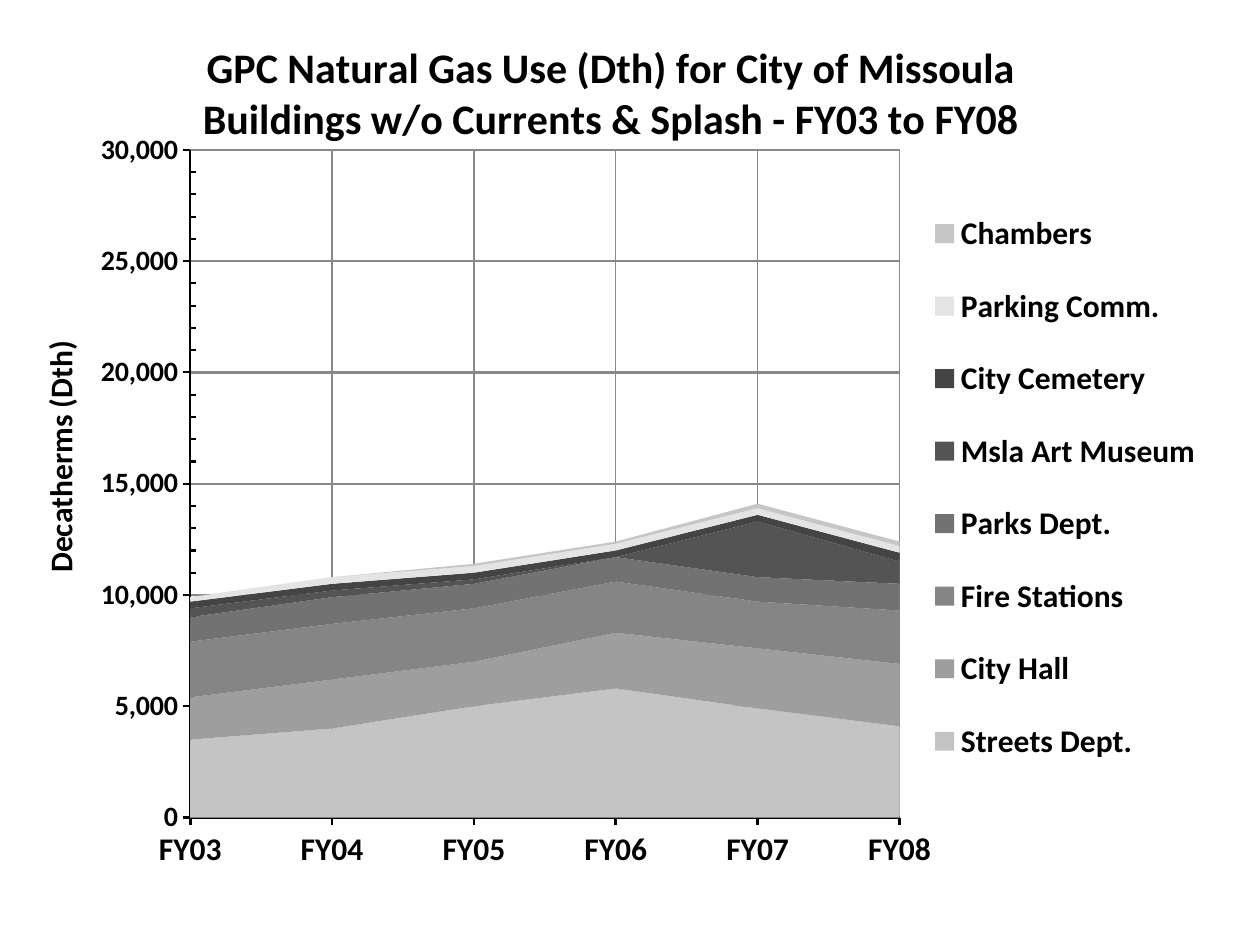
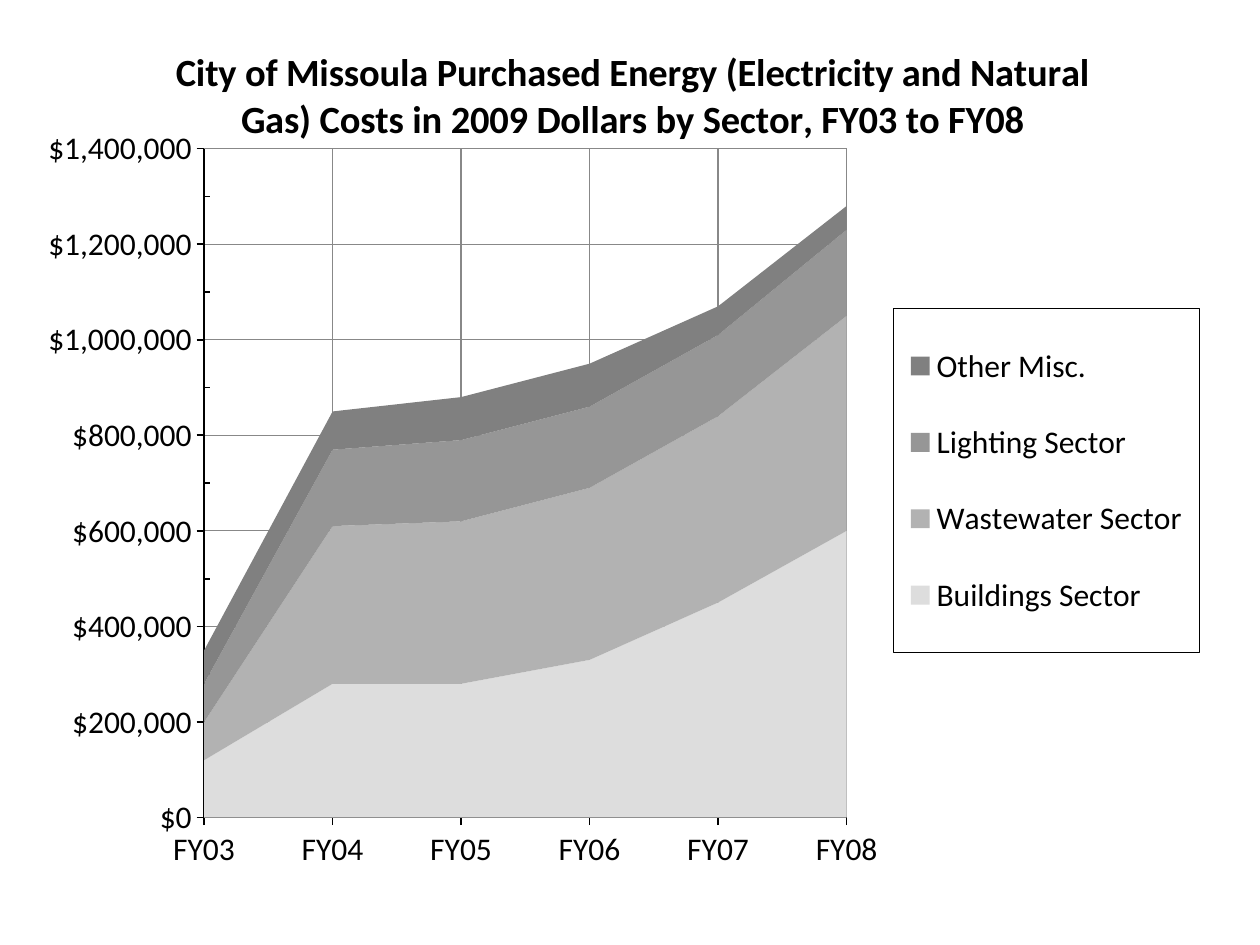
from itertools import cycle
from lxml import etree
from pptx import Presentation
from pptx.chart.data import CategoryChartData
from pptx.dml.color import RGBColor
from pptx.enum.chart import XL_CHART_TYPE, XL_LEGEND_POSITION, XL_TICK_MARK
from pptx.oxml import parse_xml
from pptx.oxml.ns import nsdecls, qn
from pptx.util import Inches, Pt

BLACK = RGBColor(0x00, 0x00, 0x00)
GRID = RGBColor(0x88, 0x88, 0x88)
WIDE, HIGH = Inches(9.46), Inches(6.87)

# Content: series run from the bottom band to the top;
# spots, plots and legends are in inches from the chart's corner
YEARS = ["FY03", "FY04", "FY05", "FY06", "FY07", "FY08"]

GAS = {
    "title": "GPC Natural Gas Use (Dth) for City of Missoula "
             "Buildings w/o Currents & Splash - FY03 to FY08",
    "size": 24, "bold": True, "alpha": 61,
    "spot": (1.3, 0),
    "plot": (1.26, 0.94, 5.63, 5.3),
    "legend": (7.03, 1.18, 2.35, 4.88), "frame": False,
    "axis": "Decatherms (Dth)", "format": "#,##0",
    "max": 30000, "major": 5000, "minor": 1000,
    "label": 16, "line": (1.5, 1.25), "grid": 1.25,
    "series": [
        ("Streets Dept.", "C4C4C4", (3500, 4000, 5000, 5800, 4900, 4100)),
        ("City Hall", "9E9E9E", (1900, 2200, 2000, 2500, 2700, 2800)),
        ("Fire Stations", "858585", (2500, 2500, 2400, 2300, 2100, 2400)),
        ("Parks Dept.", "727272", (1100, 1200, 1100, 1100, 1100, 1200)),
        ("Msla Art Museum", "545454", (400, 300, 200, None, 2500, 1000)),
        ("City Cemetery", "444444", (300, 300, 300, 300, 300, 400)),
        ("Parking Comm.", "E4E4E4", (200, 300, 300, 300, 300, 300)),
        ("Chambers", "C6C6C6", (None, None, 100, 100, 200, 200)),
    ],
}

COSTS = {
    "title": "City of Missoula Purchased Energy (Electricity and Natural Gas) "
             "Costs in 2009 Dollars by Sector, FY03 to FY08",
    "size": 22, "bold": False, "alpha": 56,
    "spot": (1.09, 0.05),
    "plot": (1.37, 0.93, 5.1, 5.31),
    "legend": (6.84, 2.2, 2.43, 2.73), "frame": True,
    "axis": None, "format": '"$"#,##0',
    "max": 1400000, "major": 200000, "minor": 100000,
    "label": 18, "line": (1, 1), "grid": 0.75,
    "series": [
        ("Buildings Sector", "DDDDDD",
         (120000, 280000, 280000, 330000, 450000, 600000)),
        ("Wastewater Sector", "B2B2B2",
         (80000, 330000, 340000, 360000, 390000, 450000)),
        ("Lighting Sector", "969696",
         (80000, 160000, 170000, 170000, 170000, 180000)),
        ("Other Misc.", "808080",
         (70000, 80000, 90000, 90000, 60000, 50000)),
    ],
}


def set_font(font, size, bold):
    font.name = "Calibri"
    font.size = Pt(size)
    font.bold = bold
    font.color.rgb = BLACK


def set_line(line, color, width):
    line.color.rgb = color
    line.width = Pt(width)


def place(node, spot, after=None, inner=False):
    """Give a chart part a manual layout, after the named child or first."""
    for old in node.findall(qn("c:layout")):
        node.remove(old)
    layout = parse_xml(f"<c:layout {nsdecls('c')}><c:manualLayout/></c:layout>")
    parts = [("layoutTarget", "inner")] if inner else []
    parts += [("xMode", "edge"), ("yMode", "edge")]
    parts += [(tag, Inches(length) / full)
              for tag, length, full in zip("xywh", spot, cycle((WIDE, HIGH)))]
    for tag, value in parts:
        etree.SubElement(layout[0], qn(f"c:{tag}")).set("val", str(value))
    if after:
        node.find(qn(after)).addnext(layout)
    else:
        node.insert(0, layout)


def add_title(title, text, size, spot):
    frame = title.text_frame
    frame.text = text
    set_font(frame.paragraphs[0].runs[0].font, size, True)
    place(title._element, spot, "c:tx")
    return frame


def style_axes(chart, info):
    years, amount = chart.category_axis, chart.value_axis
    sizes = (18, info["label"])
    for axis, size, width in zip((years, amount), sizes, info["line"]):
        axis.has_major_gridlines = True
        set_line(axis.format.line, BLACK, width)
        axis.major_tick_mark = XL_TICK_MARK.OUTSIDE
        set_font(axis.tick_labels.font, size, info["bold"])
    set_line(years.major_gridlines.format.line, GRID, 0.75)
    set_line(amount.major_gridlines.format.line, GRID, info["grid"])
    amount.minor_tick_mark = XL_TICK_MARK.INSIDE
    amount.minimum_scale, amount.maximum_scale = 0, info["max"]
    amount.major_unit, amount.minor_unit = info["major"], info["minor"]
    amount.tick_labels.number_format = info["format"]
    amount.tick_labels.number_format_is_linked = False
    amount._element.find(qn("c:crossBetween")).set("val", "midCat")
    if info["axis"]:
        frame = add_title(amount.axis_title, info["axis"], 18, (0.01, 2.41))
        body = frame._txBody.find(qn("a:bodyPr"))
        body.set("rot", "-5400000")
        body.set("vert", "horz")


def style_legend(chart, info):
    chart.has_legend = True
    legend = chart.legend
    legend.position = XL_LEGEND_POSITION.RIGHT
    legend.include_in_layout = False
    set_font(legend.font, 18, info["bold"])
    place(legend._element, info["legend"], "c:legendPos")
    if info["frame"]:
        legend._element.find(qn("c:overlay")).addnext(parse_xml(
            f'<c:spPr {nsdecls("c", "a")}><a:ln w="9525"><a:solidFill>'
            f'<a:srgbClr val="{BLACK}"/></a:solidFill></a:ln></c:spPr>'))


def add_area(slide, info):
    data = CategoryChartData(number_format=info["format"])
    data.categories = YEARS
    for name, _, values in info["series"]:
        data.add_series(name, values)
    chart = slide.shapes.add_chart(
        XL_CHART_TYPE.AREA_STACKED, Inches(0.25), Inches(0.25),
        WIDE, HIGH, data).chart
    set_font(chart.font, 16, info["bold"])

    # Title, plot and bands
    chart.has_title = True
    add_title(chart.chart_title, info["title"], info["size"], info["spot"])
    chart.chart_title.include_in_layout = True
    root = chart._chartSpace
    place(root.chart.plotArea, info["plot"], inner=True)
    for band, (_, color, _) in zip(chart.plots[0].series, info["series"]):
        band.format.fill.solid()
        band.format.fill.fore_color.rgb = RGBColor.from_string(color)
        band.format.line.fill.background()
    style_axes(chart, info)
    style_legend(chart, info)

    # Missing values count as zero; see-through white backing
    for blank in root.iter(qn("c:dispBlanksAs")):
        blank.set("val", "zero")
    root.chart.addnext(parse_xml(
        f'<c:spPr {nsdecls("c", "a")}><a:solidFill><a:srgbClr val="FFFFFF">'
        f'<a:alpha val="{info["alpha"] * 1000}"/></a:srgbClr></a:solidFill>'
        '<a:ln><a:noFill/></a:ln></c:spPr>'))


def main():
    deck = Presentation()
    deck.slide_width, deck.slide_height = Inches(10), Inches(7.5)
    for info in (GAS, COSTS):
        add_area(deck.slides.add_slide(deck.slide_layouts[6]), info)
    deck.save("out.pptx")


if __name__ == "__main__":
    main()
